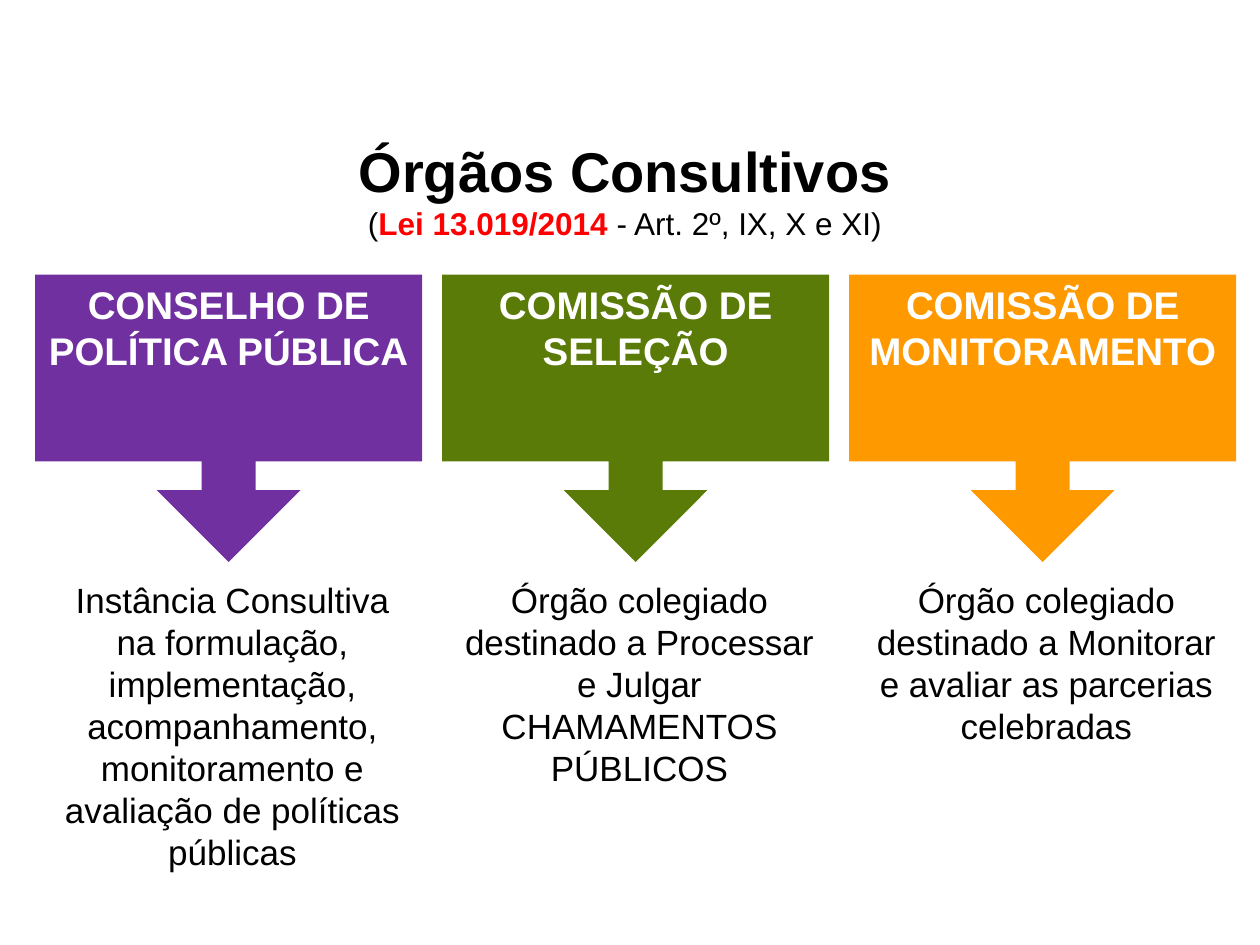
from pptx import Presentation
from pptx.dml.color import RGBColor
from pptx.enum.shapes import MSO_SHAPE
from pptx.enum.text import MSO_ANCHOR, MSO_AUTO_SIZE, PP_ALIGN
from pptx.util import Inches, Pt

TITLE = "Órgãos Consultivos"
REFERENCE = [
    ("(", "000000", False),
    ("Lei 13.019/2014 ", "FF0000", True),
    ("- Art. 2º, IX, X e XI)", "000000", False),
]
BODIES = [
    ("CONSELHO DE POLÍTICA PÚBLICA", "7030A0",
     "Instância Consultiva na formulação, implementação, acompanhamento, "
     "monitoramento e avaliação de políticas públicas"),
    ("COMISSÃO DE SELEÇÃO", "5A7B07",
     "Órgão colegiado destinado a Processar e Julgar CHAMAMENTOS PÚBLICOS"),
    ("COMISSÃO DE MONITORAMENTO", "FF9900",
     "Órgão colegiado destinado a Monitorar e avaliar as parcerias celebradas"),
]
CALLOUT_ADJUSTMENTS = [0.188, 0.25, 0.25, 0.65]
LEFT, PITCH = 0.28, 3.23
CALLOUT_TOP, CALLOUT_WIDTH, CALLOUT_HEIGHT = 2.18, 3.07, 2.28
TEXT_INDENT, TEXT_TOP, TEXT_WIDTH, TEXT_HEIGHT = 0.07, 4.54, 2.99, 2.44


def color(value):
    return RGBColor.from_string(value)


def write(paragraph, text, size=20, fill="000000", bold=False):
    paragraph.alignment = PP_ALIGN.CENTER
    run = paragraph.add_run()
    run.text = text
    run.font.name = "Arial"
    run.font.size = Pt(size)
    run.font.bold = bold
    run.font.color.rgb = color(fill)


def prepare(shape, anchor):
    frame = shape.text_frame
    frame.word_wrap = True
    frame.auto_size = MSO_AUTO_SIZE.NONE
    frame.vertical_anchor = anchor
    return frame


def add_title(slide):
    title = slide.shapes.title
    title.left, title.top = Inches(-0.04), Inches(0.99)
    title.width, title.height = Inches(10), Inches(1.02)
    frame = prepare(title, MSO_ANCHOR.MIDDLE)
    write(frame.paragraphs[0], TITLE, size=32, bold=True)
    paragraph = frame.add_paragraph()
    for text, fill, bold in REFERENCE:
        write(paragraph, text, size=18, fill=fill, bold=bold)


def add_callout(slide, left, text, fill):
    callout = slide.shapes.add_shape(
        MSO_SHAPE.DOWN_ARROW_CALLOUT, Inches(left), Inches(CALLOUT_TOP),
        Inches(CALLOUT_WIDTH), Inches(CALLOUT_HEIGHT))
    for index, value in enumerate(CALLOUT_ADJUSTMENTS):
        callout.adjustments[index] = value
    callout.shadow.inherit = False
    callout.fill.solid()
    callout.fill.fore_color.rgb = color(fill)
    callout.line.fill.background()
    frame = prepare(callout, MSO_ANCHOR.TOP)
    write(frame.paragraphs[0], text, size=22, fill="FFFFFF", bold=True)


def add_description(slide, left, text):
    box = slide.shapes.add_textbox(
        Inches(left), Inches(TEXT_TOP), Inches(TEXT_WIDTH), Inches(TEXT_HEIGHT))
    write(prepare(box, MSO_ANCHOR.TOP).paragraphs[0], text)


def main():
    presentation = Presentation()
    presentation.slide_width, presentation.slide_height = Inches(10), Inches(7.5)
    slide = presentation.slides.add_slide(presentation.slide_layouts[5])
    add_title(slide)
    for index, (name, fill, description) in enumerate(BODIES):
        left = LEFT + index * PITCH
        add_callout(slide, left, name, fill)
        add_description(slide, left + TEXT_INDENT, description)
    presentation.save("out.pptx")


if __name__ == "__main__":
    main()
